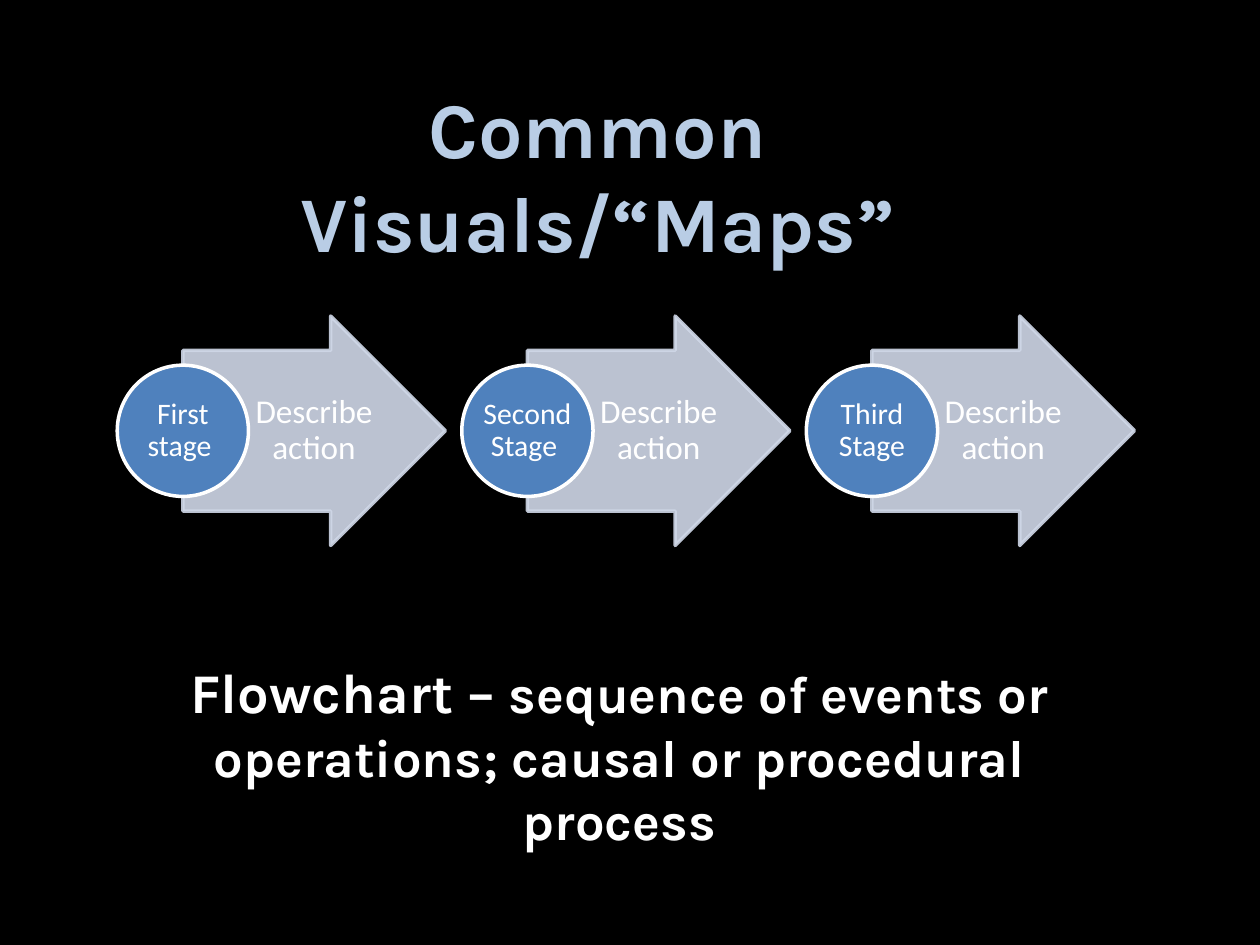
import pptx
import pptx.util
import pptx.dml.color
import pptx.enum.shapes
import pptx.enum.text
import pptx.oxml
import pptx.oxml.ns

Pt = pptx.util.Pt
MSO_SHAPE = pptx.enum.shapes.MSO_SHAPE
ANCHOR = pptx.enum.text.MSO_ANCHOR


def rgb(hex_color):
    return pptx.dml.color.RGBColor.from_string(hex_color)


def add_text(shapes, box, runs, font, anchor=ANCHOR.TOP, insets=(7.2, 3.6, 7.2, 3.6),
             bold=False, spacing=None):
    """Add a centred text box; runs are (text, size, colour)."""
    sp = shapes.add_textbox(*[Pt(v) for v in box])
    tf = sp.text_frame
    tf.word_wrap = True
    tf.vertical_anchor = anchor
    tf.margin_left, tf.margin_top, tf.margin_right, tf.margin_bottom = [Pt(v) for v in insets]
    p = tf.paragraphs[0]
    p.alignment = pptx.enum.text.PP_ALIGN.CENTER
    p.line_spacing = spacing
    for text, size, color in runs:
        r = p.add_run()
        r.text = text
        r.font.name = font
        r.font.size = Pt(size)
        r.font.bold = bold
        r.font.color.rgb = rgb(color)
    return tf


prs = pptx.Presentation()
prs.slide_width, prs.slide_height = Pt(720), Pt(540)
s = prs.slides.add_slide(prs.slide_layouts[6])
s.background.fill.solid()
s.background.fill.fore_color.rgb = rgb("000000")

# Flowchart: one arrow with a stage circle per step
STEP = 196.9
flow = s.shapes.add_group_shape().shapes
for i, stage in enumerate(["First stage ", "Second Stage ", "Third Stage"]):
    x = 67 + i * STEP
    outlines = [
        (MSO_SHAPE.RIGHT_ARROW, (x + 37.5, 180.6, 150, 131.1), "D0D8E8", "D0D8E8"),
        (MSO_SHAPE.OVAL, (x, 208.7, 75, 75), "4F81BD", "FFFFFF"),
    ]
    labels = [
        ((x + 75, 200.3, 73.2, 91.8), "Describe action", 19, (3.6, 0.9, 1.8, 0.9)),
        ((x + 11, 219.6, 53, 53), stage, 17, (0.8, 0.8, 0.8, 0.8)),
    ]
    for (kind, box, fill, line), (label_box, text, size, insets) in zip(outlines, labels):
        sp = flow.add_shape(kind, *[Pt(v) for v in box])
        sp.shadow.inherit = False
        sp.fill.solid()
        sp.fill.fore_color.rgb = rgb(fill)
        sp.line.color.rgb = rgb(line)
        sp.line.width = Pt(2)
        if kind == MSO_SHAPE.RIGHT_ARROW:
            sp.adjustments[0], sp.adjustments[1] = 0.7, 0.5
            # Fill and line are 90% opaque
            for clr in sp.element.spPr.iter(pptx.oxml.ns.qn("a:srgbClr")):
                clr.append(pptx.oxml.parse_xml(
                    '<a:alpha %s val="90000"/>' % pptx.oxml.ns.nsdecls("a")))
        add_text(flow, label_box, [(text, size, "FFFFFF")], "Calibri",
                 ANCHOR.MIDDLE, insets, spacing=0.9)

# Caption and title
captions = [
    ((59.8, 372.2, 588.2, 82.1),
     [("Flowchart ", 32, "FFFFFF"),
      ("– sequence of events or operations; causal or procedural process", 30, "FFFFFF")]),
    ((74.2, 41.8, 534.2, 61.9), [("Common Visuals/“Maps”", 45, "B9CDE5")]),
]
for box, runs in captions:
    tf = add_text(s.shapes, box, runs, "Karla", bold=True)
    tf.auto_size = pptx.enum.text.MSO_AUTO_SIZE.SHAPE_TO_FIT_TEXT

prs.save("out.pptx")
